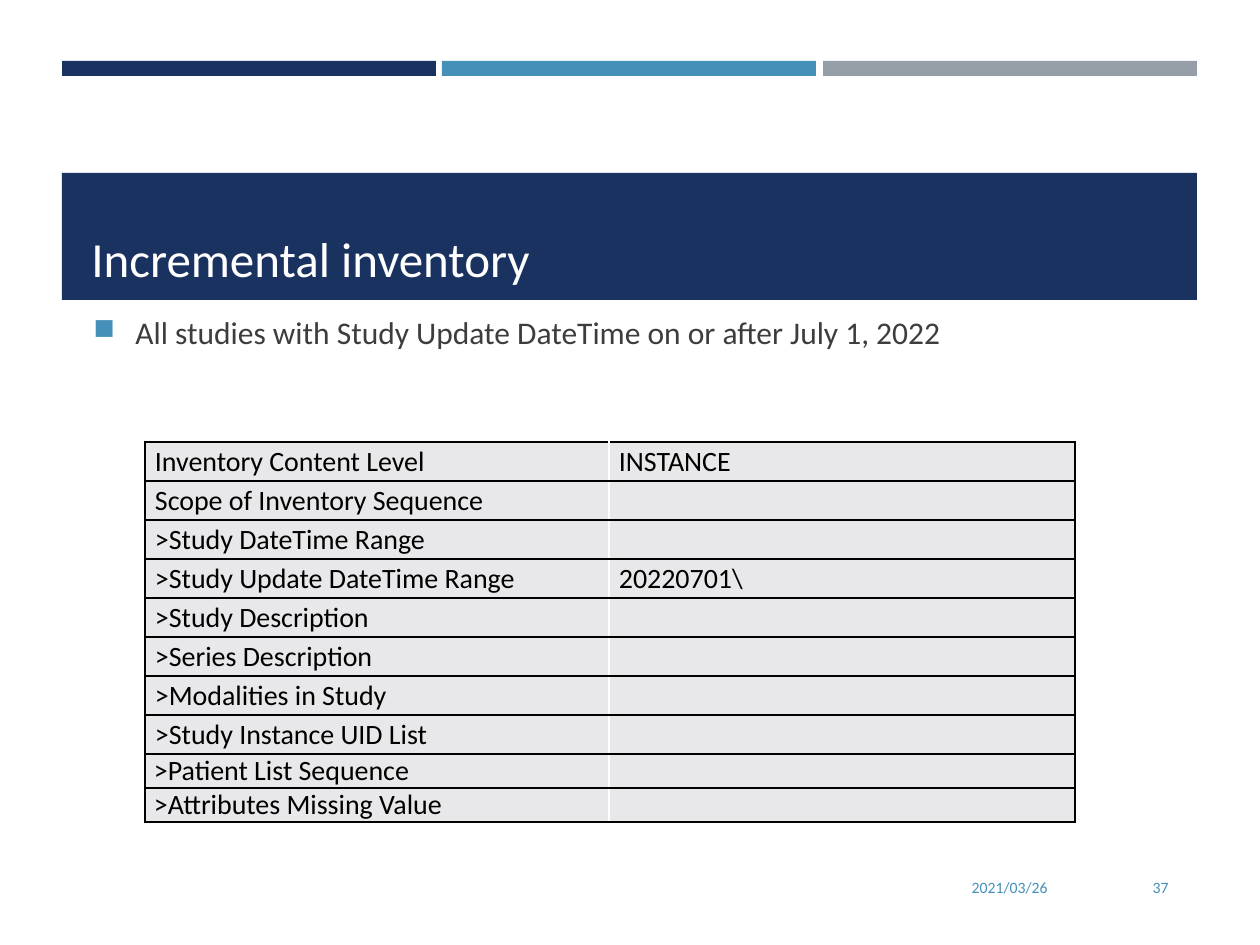
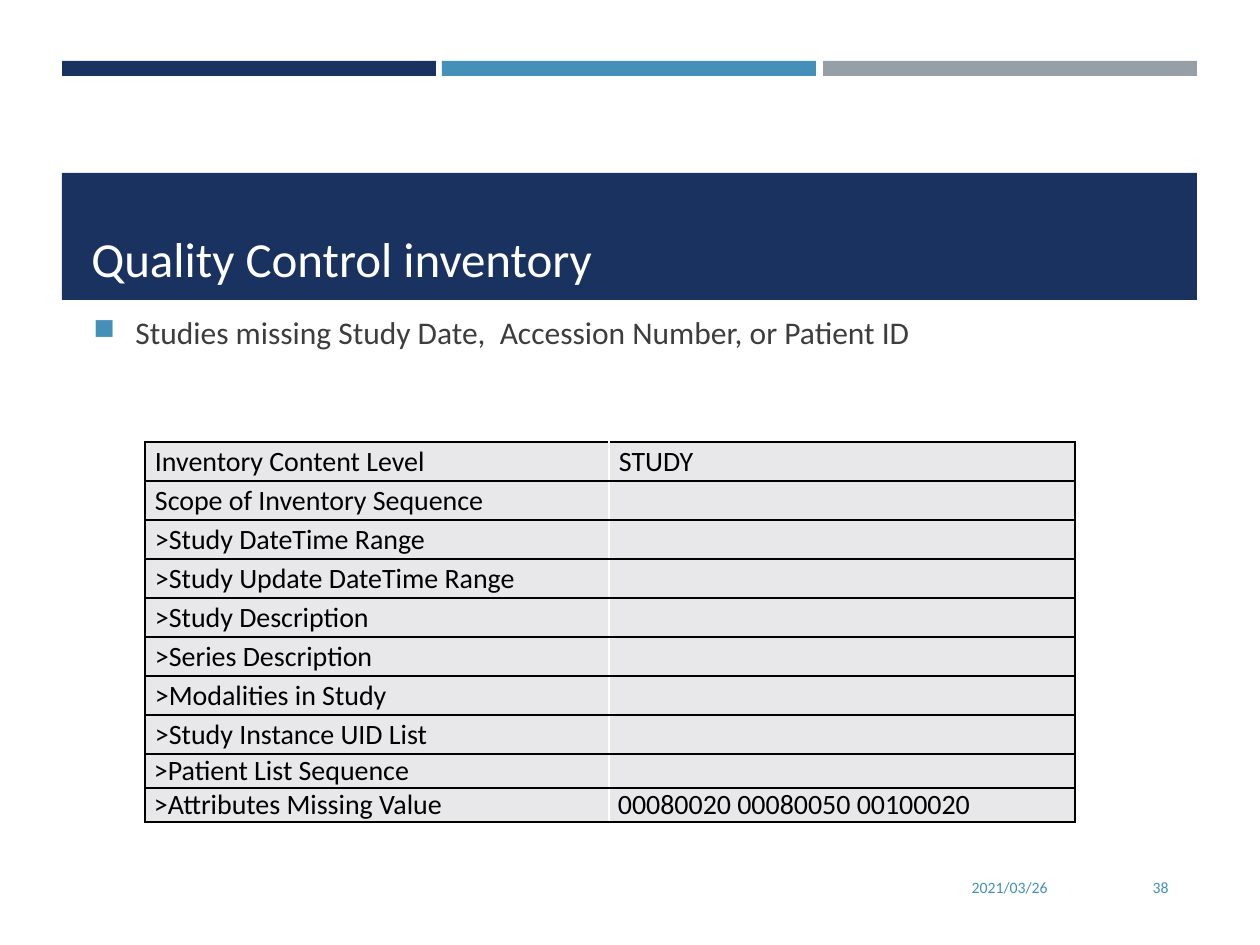
from dataclasses import dataclass

from lxml import etree
from pptx import Presentation
from pptx.dml.color import RGBColor
from pptx.enum.shapes import MSO_SHAPE
from pptx.enum.text import MSO_ANCHOR, PP_ALIGN
from pptx.oxml.ns import qn
from pptx.util import Emu, Pt

RECTANGLE = MSO_SHAPE.RECTANGLE
TOP, MIDDLE, BOTTOM = MSO_ANCHOR.TOP, MSO_ANCHOR.MIDDLE, MSO_ANCHOR.BOTTOM
LEFT, RIGHT = PP_ALIGN.LEFT, PP_ALIGN.RIGHT

NAVY = RGBColor(0x1A, 0x32, 0x60)
BLUE = RGBColor(0x45, 0x90, 0xB8)
GRAY = RGBColor(0x96, 0x9F, 0xA7)
CHARCOAL = RGBColor(0x3D, 0x3D, 0x3D)
CELL_GRAY = RGBColor(0xE8, 0xE8, 0xEA)
BLACK = RGBColor(0, 0, 0)
WHITE = RGBColor(0xFF, 0xFF, 0xFF)

FONT = "Calibri"
PX_PER_INCH = 126
BORDER_WIDTH = Pt(1)
CELL_SIZE = Pt(16)
BULLET_INDENT = 42


@dataclass(frozen=True)
class Box:
    left: int
    top: int
    width: int
    height: int


@dataclass(frozen=True)
class TextStyle:
    size: int
    color: RGBColor
    anchor: MSO_ANCHOR = TOP
    align: PP_ALIGN = LEFT


@dataclass(frozen=True)
class RowStyle:
    height: int
    side: int
    above: int
    below: int


@dataclass(frozen=True)
class InventorySlide:
    title: str
    summary: str
    number: int
    values: dict[str, str]


TITLE_BAND = Box(62, 173, 1135, 127)
TITLE_BOX = Box(79, 179, 1101, 115)
SUMMARY_BOX = Box(81, 307, 1101, 115)
DATE_BOX = Box(766, 862, 294, 50)
NUMBER_BOX = Box(1075, 862, 106, 50)
STRIPE_COLORS = (NAVY, BLUE, GRAY)
STRIPE = Box(62, 61, 374, 15)

TITLE_STYLE = TextStyle(28, WHITE, BOTTOM)
SUMMARY_STYLE = TextStyle(18, CHARCOAL)
FOOTER_STYLE = TextStyle(9, BLUE, MIDDLE, RIGHT)

TABLE_LEFT, TABLE_TOP = 145, 442
COLUMN_WIDTHS = (464, 466)
ROOMY = RowStyle(39, 10, 3, 2)
TIGHT = RowStyle(34, 9, 0, 0)
ATTRIBUTES = {
    "Inventory Content Level": ROOMY,
    "Scope of Inventory Sequence": ROOMY,
    ">Study DateTime Range": ROOMY,
    ">Study Update DateTime Range": ROOMY,
    ">Study Description": ROOMY,
    ">Series Description": ROOMY,
    ">Modalities in Study": ROOMY,
    ">Study Instance UID List": ROOMY,
    ">Patient List Sequence": TIGHT,
    ">Attributes Missing Value": TIGHT,
}

SLIDES = (
    InventorySlide(
        "Incremental inventory",
        "All studies with Study Update DateTime on or after July 1, 2022",
        37,
        {
            "Inventory Content Level": "INSTANCE",
            ">Study Update DateTime Range": "20220701\\",
        },
    ),
    InventorySlide(
        "Quality Control inventory",
        "Studies missing Study Date,  Accession Number, or Patient ID",
        38,
        {
            "Inventory Content Level": "STUDY",
            ">Attributes Missing Value": "00080020 00080050 00100020",
        },
    ),
)


def px(length: int) -> Emu:
    """Turn pixels into EMU."""
    return Emu(round(length * 914400 / PX_PER_INCH))


def place(box: Box) -> tuple[Emu, Emu, Emu, Emu]:
    """Give the position and size of a box in EMU."""
    return px(box.left), px(box.top), px(box.width), px(box.height)


def add_bar(slide, box: Box, color: RGBColor) -> None:
    """Draw a plain filled rectangle."""
    bar = slide.shapes.add_shape(RECTANGLE, *place(box))
    bar.shadow.inherit = False
    bar.fill.solid()
    bar.fill.fore_color.rgb = color
    bar.line.fill.background()


def format_runs(paragraph, size: Pt, color: RGBColor) -> None:
    """Set font, size and colour on every run of a paragraph."""
    for run in paragraph.runs:
        run.font.name = FONT
        run.font.size = size
        run.font.color.rgb = color


def add_text(slide, box: Box, text: str, style: TextStyle):
    """Add a wrapped one-paragraph text box and return its paragraph."""
    frame = slide.shapes.add_textbox(*place(box)).text_frame
    frame.word_wrap = True
    frame.vertical_anchor = style.anchor
    frame.text = text
    paragraph = frame.paragraphs[0]
    paragraph.alignment = style.align
    format_runs(paragraph, Pt(style.size), style.color)
    return paragraph


def add_bullet(paragraph) -> None:
    """Give a paragraph a blue square bullet with a hanging indent."""
    properties = paragraph._p.get_or_add_pPr()
    properties.set("marL", str(px(BULLET_INDENT)))
    properties.set("indent", str(-px(BULLET_INDENT)))
    color = etree.SubElement(properties, qn("a:buClr"))
    etree.SubElement(color, qn("a:srgbClr"), val=str(BLUE))
    etree.SubElement(properties, qn("a:buSzPct"), val="92000")
    etree.SubElement(properties, qn("a:buChar"), char="■")


def set_borders(cell, left: RGBColor, right: RGBColor) -> None:
    """Draw the four cell borders, black above and below."""
    properties = cell._tc.get_or_add_tcPr()
    sides = {"a:lnL": left, "a:lnR": right, "a:lnT": BLACK, "a:lnB": BLACK}
    for tag, color in sides.items():
        line = etree.SubElement(properties, qn(tag), w=str(BORDER_WIDTH))
        fill = etree.SubElement(line, qn("a:solidFill"))
        etree.SubElement(fill, qn("a:srgbClr"), val=str(color))


def fill_cell(cell, text: str, style: RowStyle) -> None:
    """Write and format the contents of a bordered cell."""
    cell.fill.solid()
    cell.fill.fore_color.rgb = CELL_GRAY
    cell.margin_left = cell.margin_right = px(style.side)
    cell.margin_top, cell.margin_bottom = px(style.above), px(style.below)
    paragraph = cell.text_frame.paragraphs[0]
    paragraph.text = text
    format_runs(paragraph, CELL_SIZE, BLACK)
    if not text:
        size = str(int(CELL_SIZE.pt * 100))
        ending = etree.SubElement(paragraph._p, qn("a:endParaRPr"), sz=size)
        etree.SubElement(ending, qn("a:latin"), typeface=FONT)


def add_attribute_table(slide, values: dict[str, str]) -> None:
    """Add the table of inventory attributes and their values."""
    height = sum(style.height for style in ATTRIBUTES.values())
    box = Box(TABLE_LEFT, TABLE_TOP, sum(COLUMN_WIDTHS), height)
    table = slide.shapes.add_table(
        len(ATTRIBUTES), len(COLUMN_WIDTHS), *place(box)
    ).table
    table.first_row = table.horz_banding = False
    for column, width in zip(table.columns, COLUMN_WIDTHS):
        column.width = px(width)
    for row, (attribute, style) in zip(table.rows, ATTRIBUTES.items()):
        row.height = px(style.height)
        name_cell, value_cell = row.cells
        set_borders(name_cell, BLACK, WHITE)
        set_borders(value_cell, WHITE, BLACK)
        fill_cell(name_cell, attribute, style)
        fill_cell(value_cell, values.get(attribute, ""), style)


def add_frame(slide, title: str, number: int) -> None:
    """Draw the stripes, title band and footer shared by all slides."""
    span = TITLE_BAND.width - STRIPE.width
    for index, color in enumerate(STRIPE_COLORS):
        left = STRIPE.left + index * span // (len(STRIPE_COLORS) - 1)
        add_bar(slide, Box(left, STRIPE.top, STRIPE.width, STRIPE.height), color)
    add_bar(slide, TITLE_BAND, NAVY)
    add_text(slide, TITLE_BOX, title, TITLE_STYLE)
    add_text(slide, DATE_BOX, "2021/03/26", FOOTER_STYLE)
    add_text(slide, NUMBER_BOX, str(number), FOOTER_STYLE)


def main() -> None:
    """Build the presentation and save it."""
    presentation = Presentation()
    presentation.slide_width, presentation.slide_height = px(1260), px(945)
    blank = presentation.slide_layouts[6]
    for content in SLIDES:
        slide = presentation.slides.add_slide(blank)
        add_frame(slide, content.title, content.number)
        add_bullet(add_text(slide, SUMMARY_BOX, content.summary, SUMMARY_STYLE))
        add_attribute_table(slide, content.values)
    presentation.save("out.pptx")


if __name__ == "__main__":
    main()
